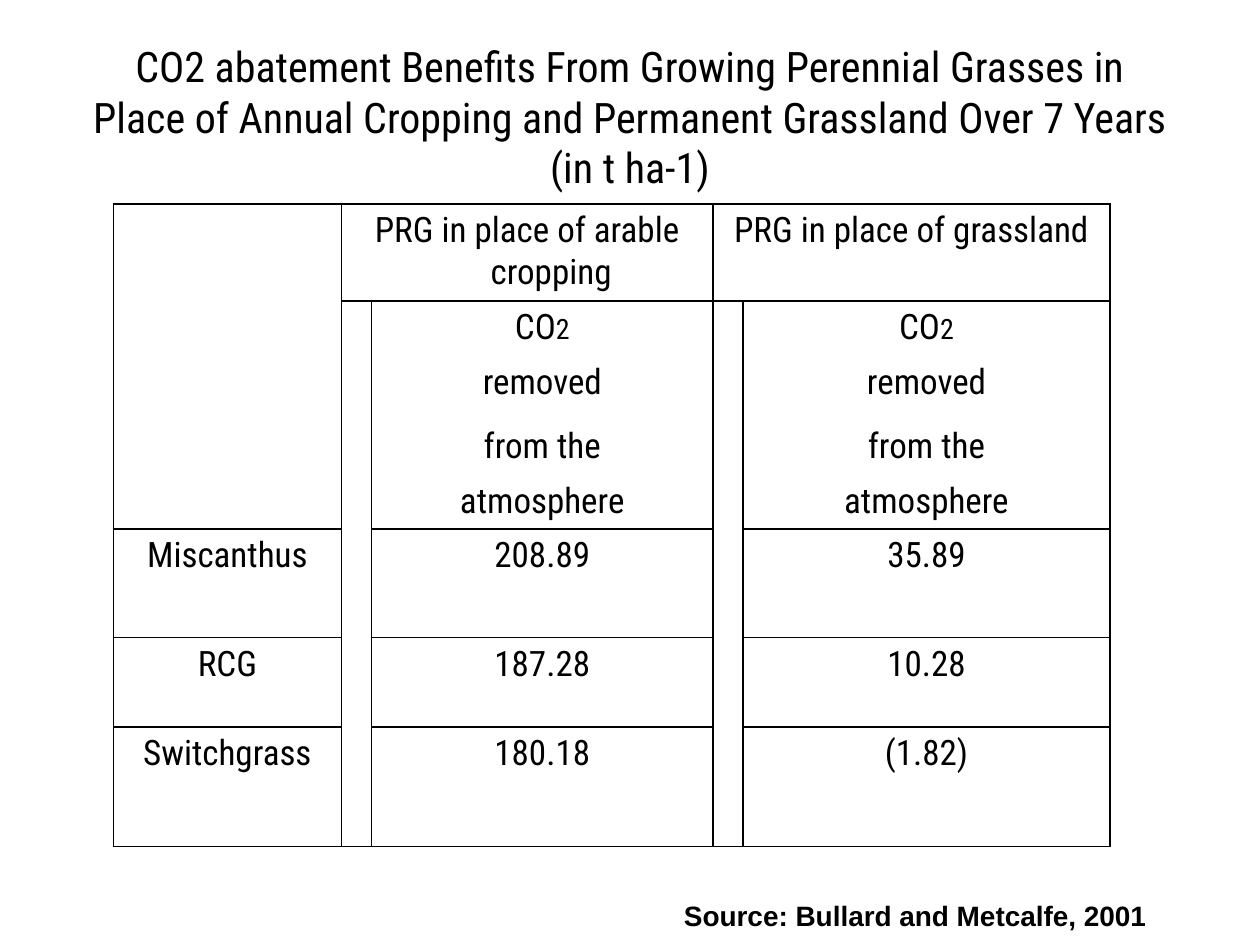
import pptx
import pptx.dml.color
import pptx.enum.text
import pptx.oxml
import pptx.oxml.ns
import pptx.util

PX = 9144  # EMU per px, at 100 px to the inch
ALIGN = pptx.enum.text.PP_ALIGN
ANCHOR = pptx.enum.text.MSO_ANCHOR
BLACK = pptx.dml.color.RGBColor(0, 0, 0)
THEME = {
    "title": {"name": "Roboto Condensed", "size": pptx.util.Pt(24)},
    "cell": {"name": "Roboto Condensed", "size": pptx.util.Pt(20)},
    "subscript": {"name": "Roboto Condensed", "size": pptx.util.Pt(16)},
    "source": {"name": "Arial", "size": pptx.util.Pt(16), "bold": True},
    "border": {"color": "000000", "width": pptx.util.Pt(1)},
    "hanging": 38,
}

TITLE = (
    "CO2 abatement Benefits From Growing Perennial Grasses in\v"
    "Place of Annual Cropping and Permanent Grassland Over 7 Years (in t ha-1)"
)
SOURCE = "Source: Bullard and Metcalfe, 2001"

COLUMN_WIDTHS = [181, 23, 271, 23, 291]
ROW_HEIGHTS = [73, 41, 51, 42, 41, 86, 71, 95]
GROUP_HEADS = {1: "PRG in place of arable cropping", 3: "PRG in place of grassland"}
VALUE_COLUMNS = (2, 4)
UNIT_LINES = ["removed", "from the", "atmosphere"]
UNIT_ROWS = range(1, 5)
GRASSES = [
    ("Miscanthus", "208.89", "35.89"),
    ("RCG", "187.28", "10.28"),
    ("Switchgrass", "180.18", "(1.82)"),
]


def emu(box):
    return [length * PX for length in box]


def apply(target, formats):
    for attribute, value in formats.items():
        setattr(target, attribute, value)


def add_run(paragraph, text, style):
    run = paragraph.add_run()
    run.text = text
    apply(run.font, THEME[style])
    run.font.color.rgb = BLACK


def add_text(slide, box, text, style, align, anchor):
    frame = slide.shapes.add_textbox(*emu(box)).text_frame
    apply(frame, {"word_wrap": True, "vertical_anchor": anchor})
    paragraph = frame.paragraphs[0]
    paragraph.alignment = align
    # A line break splits the wording into runs of one paragraph.
    for index, line in enumerate(text.split("\v")):
        if index:
            paragraph.add_line_break()
        add_run(paragraph, line, style)


def write_cell(cell, *pieces):
    """Centre (text, style) pieces in the cell, with a hanging indent."""
    paragraph = cell.text_frame.paragraphs[0]
    paragraph.alignment = ALIGN.CENTER
    hanging = THEME["hanging"] * PX
    properties = paragraph._p.get_or_add_pPr()
    for attribute, value in {"marL": hanging, "indent": -hanging}.items():
        properties.set(attribute, str(value))
    for text, style in pieces:
        add_run(paragraph, text, style)


def set_borders(cell, hidden):
    """Rule every side of the cell except the hidden ones."""
    border = THEME["border"]
    solid = f'<a:solidFill><a:srgbClr val="{border["color"]}"/></a:solidFill>'
    properties = cell._tc.get_or_add_tcPr()
    for side in "LRTB":
        fill = "<a:noFill/>" if side in hidden else solid
        properties.append(pptx.oxml.parse_xml(
            f'<a:ln{side} {pptx.oxml.ns.nsdecls("a")} w="{border["width"]}">'
            f"{fill}</a:ln{side}>"
        ))
    cell.fill.background()


def hidden_sides(row, column):
    """The unit heading fills stacked cells with no rule between them."""
    if column not in VALUE_COLUMNS or row not in UNIT_ROWS:
        return ""
    return ("T" if row > UNIT_ROWS[0] else "") + ("B" if row < UNIT_ROWS[-1] else "")


def add_abatement_table(slide, left, top):
    size = sum(COLUMN_WIDTHS), sum(ROW_HEIGHTS)
    table = slide.shapes.add_table(
        len(ROW_HEIGHTS), len(COLUMN_WIDTHS), *emu((left, top, *size))
    ).table
    apply(table, {"first_row": False, "horz_banding": False})
    for column, width in zip(table.columns, COLUMN_WIDTHS):
        column.width = width * PX
    for row, height in zip(table.rows, ROW_HEIGHTS):
        row.height = height * PX
    for row in range(len(ROW_HEIGHTS)):
        for column in range(len(COLUMN_WIDTHS)):
            set_borders(table.cell(row, column), hidden_sides(row, column))

    table.cell(0, 0).merge(table.cell(UNIT_ROWS[-1], 0))
    for column, head in GROUP_HEADS.items():
        table.cell(0, column).merge(table.cell(0, column + 1))
        table.cell(1, column).merge(table.cell(len(ROW_HEIGHTS) - 1, column))
        write_cell(table.cell(0, column), (head, "cell"))
    for column in VALUE_COLUMNS:
        write_cell(table.cell(1, column), ("CO", "cell"), ("2", "subscript"))
        for row, line in enumerate(UNIT_LINES, UNIT_ROWS[1]):
            write_cell(table.cell(row, column), (line, "cell"))
    for row, grass in enumerate(GRASSES, UNIT_ROWS.stop):
        for column, text in zip((0, *VALUE_COLUMNS), grass):
            write_cell(table.cell(row, column), (text, "cell"))


def main():
    presentation = pptx.Presentation()
    apply(presentation, {"slide_width": 1000 * PX, "slide_height": 750 * PX})
    slide = presentation.slides.add_slide(presentation.slide_layouts[6])
    add_text(slide, (50, 30, 900, 125), TITLE, "title", ALIGN.CENTER, ANCHOR.MIDDLE)
    add_abatement_table(slide, 90, 162)
    add_text(slide, (533, 708, 442, 37), SOURCE, "source", ALIGN.LEFT, ANCHOR.TOP)
    presentation.save("out.pptx")


if __name__ == "__main__":
    main()
